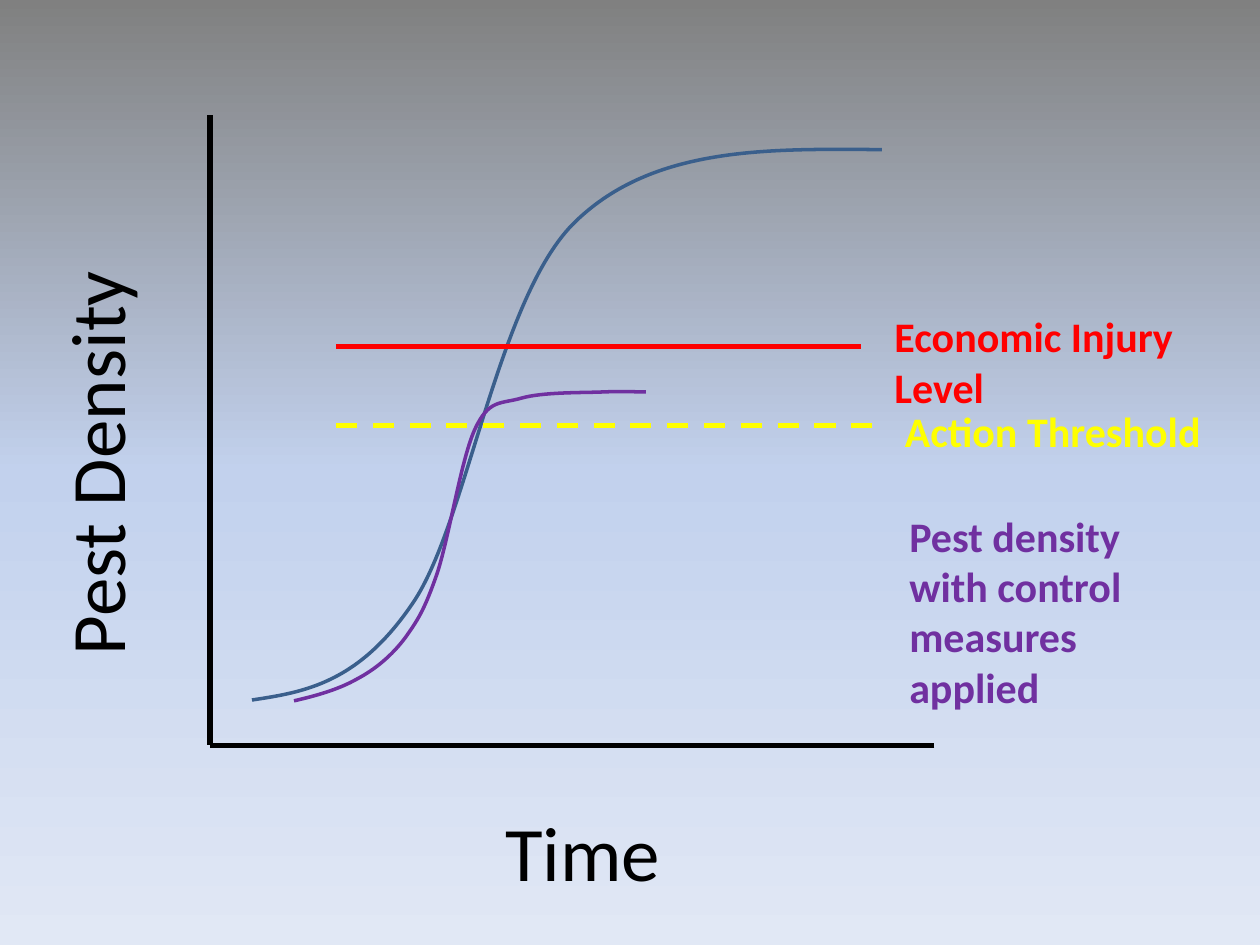
from copy import deepcopy

from lxml import etree
from pptx import Presentation
from pptx.dml.color import RGBColor
from pptx.enum.dml import MSO_LINE
from pptx.enum.shapes import MSO_CONNECTOR
from pptx.enum.text import MSO_AUTO_SIZE, PP_ALIGN
from pptx.oxml.ns import qn
from pptx.util import Pt

STRAIGHT = MSO_CONNECTOR.STRAIGHT
DASH = MSO_LINE.DASH
CENTER, LEFT = PP_ALIGN.CENTER, PP_ALIGN.LEFT
GROW = MSO_AUTO_SIZE.SHAPE_TO_FIT_TEXT

BLACK = RGBColor(0x00, 0x00, 0x00)
RED = RGBColor(0xFF, 0x00, 0x00)
YELLOW = RGBColor(0xFF, 0xFF, 0x00)
PURPLE = RGBColor(0x70, 0x30, 0xA0)
BLUE = RGBColor(0x3A, 0x5F, 0x8C)
SKY = [(0, RGBColor(0x80, 0x80, 0x80)),
       (0.5, RGBColor(0xC2, 0xD1, 0xED)),
       (1, RGBColor(0xE1, 0xE8, 0xF5))]

AXIS_LABEL = {"name": "Calibri", "size": Pt(44), "bold": False}
LINE_LABEL = {"name": "Calibri", "size": Pt(24), "bold": True}

# Bezier points: a start, then two controls and an end for each segment
UNCONTROLLED = [
    (144, 400), (174, 395.5), (205, 390.5), (236, 344.5),
    (267, 299), (284.5, 169), (329, 126.5),
    (373.5, 83.5), (439, 85), (504, 85.5)]
CONTROLLED = [
    (168, 400.5), (181, 397.5), (193.5, 394), (204, 388),
    (214.5, 382.5), (224, 374.5), (231.5, 364.5),
    (239, 354), (242.5, 348.5), (249.5, 328.5),
    (256.5, 308), (263.5, 262), (271.5, 245),
    (279.5, 228), (286, 231), (298, 227.5),
    (310.5, 224), (332.5, 224.5), (344.5, 224),
    (356.5, 223.5), (363, 224), (369, 224)]


def paint_background(slide, stops):
    """Fill the slide with a gradient running from top to bottom."""
    fill = slide.background.fill
    fill.gradient()
    fill.gradient_angle = 270
    stop_list = next(slide.element.iter(qn("a:gsLst")))
    while len(stop_list) < len(stops):
        stop_list.append(deepcopy(stop_list[0]))
    for stop, (position, color) in zip(fill.gradient_stops, stops):
        stop.position = position
        stop.color.rgb = color


def add_line(slide, start, end, color, dash=None):
    ends = [Pt(value) for value in (*start, *end)]
    connector = slide.shapes.add_connector(STRAIGHT, *ends)
    connector.line.color.rgb = color
    connector.line.width = Pt(3)
    if dash:
        connector.line.dash_style = dash
    etree.SubElement(connector.element.spPr, qn("a:effectLst"))


def add_curve(slide, points, color):
    """Draw a freeform, then join each three line steps into one Bezier."""
    start, *steps = [(Pt(x), Pt(y)) for x, y in points]
    builder = slide.shapes.build_freeform(*start)
    builder.add_line_segments(steps, close=False)
    shape = builder.convert_to_shape()
    segments = list(shape.element.iter(qn("a:lnTo")))
    for index in range(0, len(segments), 3):
        curve, *others = segments[index:index + 3]
        curve.tag = qn("a:cubicBezTo")
        for segment in others:
            curve.append(segment[0])
            segment.getparent().remove(segment)
    shape.fill.background()
    shape.line.color.rgb = color
    shape.line.width = Pt(2)
    shape.shadow.inherit = False


def add_label(slide, text, box, color, font_format, alignment=LEFT, vertical=None):
    shape = slide.shapes.add_textbox(*[Pt(value) for value in box])
    frame = shape.text_frame
    frame.word_wrap = True
    frame.auto_size = GROW
    if vertical:
        frame._txBody.bodyPr.set("vert", vertical)
    paragraph = frame.paragraphs[0]
    paragraph.alignment = alignment
    run = paragraph.add_run()
    run.text = text
    for name, value in font_format.items():
        setattr(run.font, name, value)
    run.font.color.rgb = color


def main():
    presentation = Presentation()
    presentation.slide_width = Pt(720)
    presentation.slide_height = Pt(540)
    slide = presentation.slides.add_slide(presentation.slide_layouts[6])
    paint_background(slide, SKY)

    # Axes and the growth of pests left alone
    origin = (120, 426)
    add_line(slide, (120, 66), origin, BLACK)
    add_line(slide, (534, 426), origin, BLACK)
    add_curve(slide, UNCONTROLLED, BLUE)
    add_label(slide, "Time", (216, 456, 234, 60.5), BLACK, AXIS_LABEL, CENTER)
    add_label(slide, "Pest Density", (24, 108, 67.5, 273.5), BLACK, AXIS_LABEL,
              vertical="vert270")

    # Thresholds
    add_line(slide, (192, 198), (492, 198), RED)
    add_label(slide, "Economic Injury Level", (504, 174, 198, 65.5), RED, LINE_LABEL)
    add_line(slide, (192, 243), (504, 243), YELLOW, DASH)
    add_label(slide, "Action Threshold", (510, 228, 210, 36), YELLOW, LINE_LABEL)

    # Pest density under control
    add_label(slide, "Pest density with control measures applied",
              (512.5, 288, 162, 124), PURPLE, LINE_LABEL)
    add_curve(slide, CONTROLLED, PURPLE)

    presentation.save("out.pptx")


if __name__ == "__main__":
    main()
